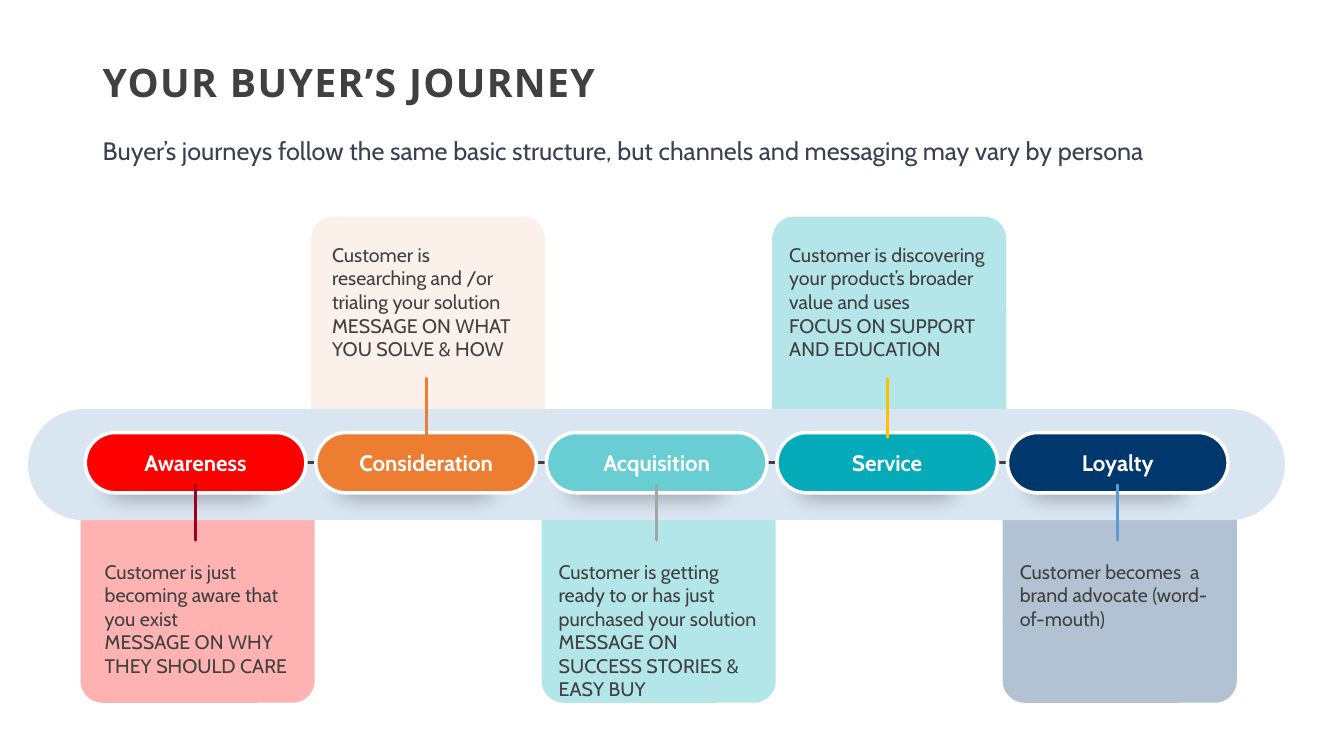
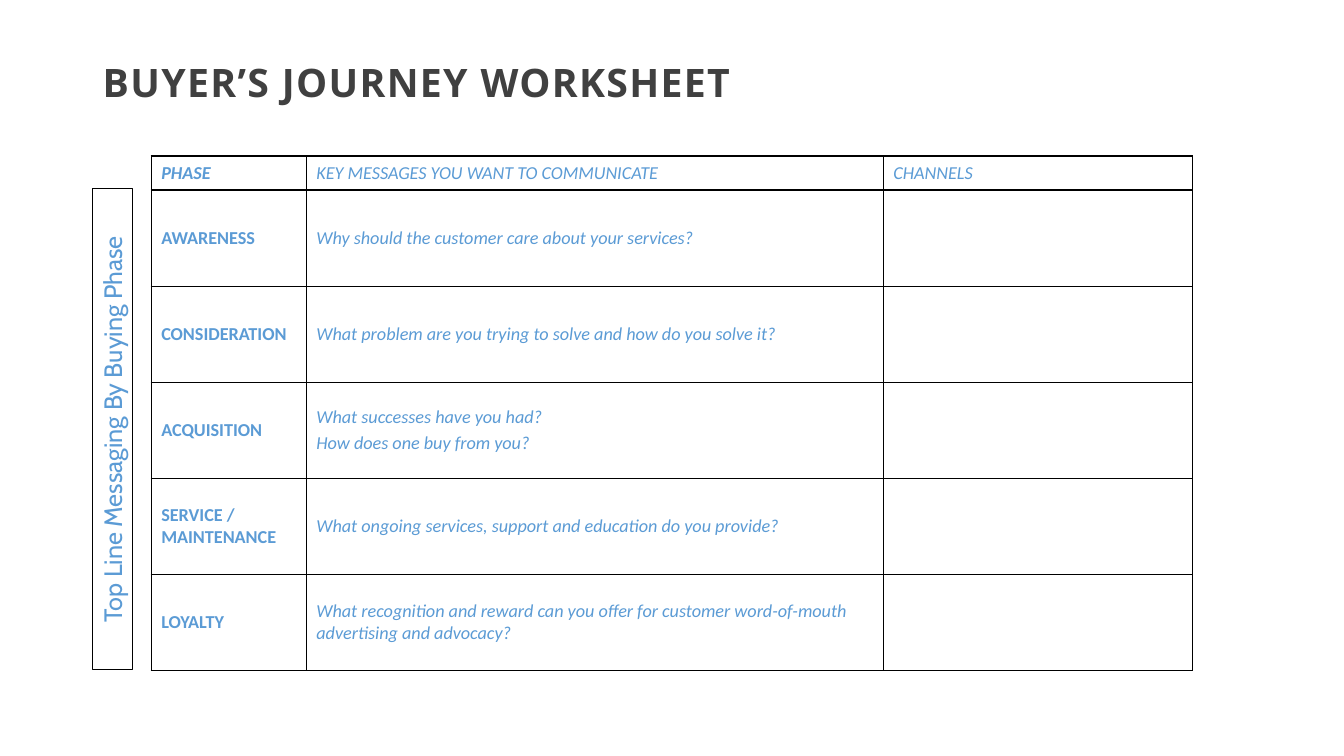
from lxml import etree
from pptx import Presentation
from pptx.dml.color import RGBColor
from pptx.enum.shapes import MSO_CONNECTOR, MSO_SHAPE
from pptx.enum.text import MSO_ANCHOR, PP_ALIGN
from pptx.oxml.ns import qn
from pptx.util import Cm, Pt

BLACK = RGBColor(0x00, 0x00, 0x00)
WHITE = RGBColor(0xFF, 0xFF, 0xFF)
CHARCOAL = RGBColor(0x40, 0x40, 0x40)
SLATE = RGBColor(0x37, 0x41, 0x51)
BAND = RGBColor(0xD9, 0xE5, 0xF1)
RED = RGBColor(0xFF, 0x00, 0x00)
CRIMSON = RGBColor(0x9B, 0x02, 0x1E)
ORANGE = RGBColor(0xED, 0x7D, 0x31)
PEACH = RGBColor(0xFB, 0xE5, 0xD6)
AQUA = RGBColor(0x68, 0xCE, 0xD3)
GREY = RGBColor(0xA5, 0xA5, 0xA5)
TEAL = RGBColor(0x05, 0xAB, 0xB9)
GOLD = RGBColor(0xFF, 0xC0, 0x00)
NAVY = RGBColor(0x00, 0x37, 0x6D)
BLUE = RGBColor(0x5B, 0x9B, 0xD5)

TITLE_FONT, BODY_FONT, TABLE_FONT = "Open Sans", "Cabin", "Calibri"

PITCH = 5.81
PILL_LEFT, PILL_TOP, PILL_W, PILL_H = 2.15, 10.9, 5.56, 1.52
CARD_W, CARD_H = 5.9, 5.37
UPPER = {"card": 5.46, "text": 6.12, "tick": (9.53, 11.02)}
LOWER = {"card": 12.34, "text": 14.1, "tick": (12.22, 13.61)}

# name, pill, card, card opacity, tick, text inset, text width, text
STAGES = [
    ("Awareness", RED, RED, 30, CRIMSON, 0.61, 4.67,
     "Customer is just becoming aware that you exist\nMESSAGE ON WHY THEY SHOULD CARE"),
    ("Consideration", ORANGE, PEACH, 50, ORANGE, 0.53, 4.9,
     "Customer is researching and /or trialing your solution\nMESSAGE ON WHAT YOU SOLVE & HOW"),
    ("Acquisition", AQUA, AQUA, 50, GREY, 0.43, 5.18,
     "Customer is getting ready to or has just purchased your solution\n"
     "MESSAGE ON SUCCESS STORIES & EASY BUY"),
    ("Service", TEAL, TEAL, 30, GOLD, 0.43, 5.03,
     "Customer is discovering your product’s broader value and uses\n"
     "FOCUS ON SUPPORT AND EDUCATION"),
    ("Loyalty", NAVY, NAVY, 30, BLUE, 0.43, 5.0,
     "Customer becomes  a brand advocate (word-of-mouth)"),
]

COLUMNS = [3.91, 14.54, 7.79]
HEADER = ("PHASE", "KEY MESSAGES YOU WANT TO COMMUNICATE", "CHANNELS")
WORKSHEET = [
    ("AWARENESS", "Why should the customer care about your services?", ""),
    ("CONSIDERATION", "What problem are you trying to solve and how do you solve it?", ""),
    ("ACQUISITION", "What successes have you had?\nHow does one buy from you?", ""),
    ("SERVICE / MAINTENANCE",
     "What ongoing services, support and education do you provide?", ""),
    ("LOYALTY", "What recognition and reward can you offer for customer "
     "word-of-mouth advertising and advocacy?", ""),
]


def write(tf, text, size, color, font=BODY_FONT, bold=False, italic=False,
          align=PP_ALIGN.LEFT, anchor=MSO_ANCHOR.TOP, inset=None,
          line_spacing=None, after=None, tracking=None):
    tf.word_wrap = True
    tf.vertical_anchor = anchor
    if inset is not None:
        tf.margin_left = tf.margin_right = tf.margin_top = tf.margin_bottom = Cm(inset)
    for i, line in enumerate(text.split("\n")):
        p = tf.add_paragraph() if i else tf.paragraphs[0]
        p.alignment = align
        p.line_spacing = line_spacing
        p.space_after = after
        r = p.add_run()
        r.text = line
        r.font.name, r.font.size = font, Pt(size)
        r.font.bold, r.font.italic = bold, italic
        r.font.color.rgb = color
        if tracking:
            r.font._element.set("spc", str(tracking * 100))


def add_text(s, x, y, w, h, text, **fmt):
    tf = s.shapes.add_textbox(Cm(x), Cm(y), Cm(w), Cm(h)).text_frame
    write(tf, text, **fmt)


def add_title(s, text):
    add_text(s, 2.34, 1.02, 29.21, 2.21, text, size=28, color=CHARCOAL,
             font=TITLE_FONT, bold=True, anchor=MSO_ANCHOR.MIDDLE,
             line_spacing=0.9, tracking=1)


def add_box(s, x, y, w, h, fill=None, opacity=100, radius=None, line=None,
            line_width=0.75, soft_edge=None):
    kind = MSO_SHAPE.RECTANGLE if radius is None else MSO_SHAPE.ROUNDED_RECTANGLE
    sp = s.shapes.add_shape(kind, Cm(x), Cm(y), Cm(w), Cm(h))
    sp.shadow.inherit = False
    if radius is not None:
        sp.adjustments[0] = radius
    if fill is None:
        sp.fill.background()
    else:
        sp.fill.solid()
        sp.fill.fore_color.rgb = fill
    if opacity < 100:
        clr = sp._element.spPr.find(qn("a:solidFill")).find(qn("a:srgbClr"))
        etree.SubElement(clr, qn("a:alpha")).set("val", str(opacity * 1000))
    if line is None:
        sp.line.fill.background()
    else:
        sp.line.color.rgb = line
        sp.line.width = Pt(line_width)
    if soft_edge:
        effects = sp._element.spPr.find(qn("a:effectLst"))
        etree.SubElement(effects, qn("a:softEdge")).set("rad", str(Pt(soft_edge)))
    return sp


def add_line(s, x1, y1, x2, y2, color):
    c = s.shapes.add_connector(MSO_CONNECTOR.STRAIGHT, Cm(x1), Cm(y1), Cm(x2), Cm(y2))
    c.line.color.rgb = color
    c.line.width = Pt(2)
    spPr = c._element.spPr
    spPr.find(qn("a:ln")).set("cap", "rnd")
    etree.SubElement(spPr, qn("a:effectLst"))


def add_borders(cell, color, width):
    tcPr = cell._tc.get_or_add_tcPr()
    for i, side in enumerate(("lnL", "lnR", "lnT", "lnB")):
        ln = etree.Element(qn(f"a:{side}"), w=str(Pt(width)))
        fill = etree.SubElement(ln, qn("a:solidFill"))
        etree.SubElement(fill, qn("a:srgbClr")).set("val", str(color))
        tcPr.insert(i, ln)


def add_worksheet(s, x, y):
    rows = [HEADER] + WORKSHEET
    heights = [0.86] + [2.42] * len(WORKSHEET)
    table = s.shapes.add_table(len(rows), len(COLUMNS), Cm(x), Cm(y),
                               Cm(sum(COLUMNS)), Cm(sum(heights))).table
    table.first_row = table.horz_banding = False
    for column, width in zip(table.columns, COLUMNS):
        column.width = Cm(width)
    for i, (row, height) in enumerate(zip(rows, heights)):
        table.rows[i].height = Cm(height)
        for j, text in enumerate(row):
            cell = table.cell(i, j)
            cell.fill.background()
            add_borders(cell, BLACK, 1)
            cell.vertical_anchor = MSO_ANCHOR.MIDDLE
            if text:
                write(cell.text_frame, text, size=13, color=BLUE, font=TABLE_FONT,
                      bold=j == 0, italic=i == 0 or j > 0,
                      anchor=None, after=Pt(2.6))


def build_journey(s):
    add_title(s, "YOUR BUYER’S JOURNEY")
    add_text(s, 2.34, 3.23, 30.56, 1.04,
             "Buyer’s journeys follow the same basic structure, "
             "but channels and messaging may vary by persona",
             size=18, color=SLATE, line_spacing=1.07)

    placed = [(PILL_LEFT + i * PITCH, UPPER if i % 2 else LOWER, stage)
              for i, stage in enumerate(STAGES)]
    for x, side, (_, _, card, opacity, _, inset, width, text) in placed:
        card_x = x - 0.12
        add_box(s, card_x, side["card"], CARD_W, CARD_H, card, opacity, radius=0.104)
        add_text(s, card_x + inset, side["text"], width, 2.2, text,
                 size=14, color=CHARCOAL, inset=0)

    add_box(s, 0.71, 10.31, 31.67, 2.8, BAND, radius=0.5)
    for x, _, _ in placed:
        add_box(s, x - 0.27, PILL_TOP + 0.68, PILL_W, PILL_H, BLACK, 30,
                radius=0.5, soft_edge=15)
    middle = PILL_TOP + PILL_H / 2
    add_line(s, 2.77, middle, 29.97, middle, CHARCOAL)
    for x, side, (name, pill, _, _, tick, _, _, _) in placed:
        sp = add_box(s, x, PILL_TOP, PILL_W, PILL_H, pill, radius=0.5,
                     line=WHITE, line_width=2.5)
        write(sp.text_frame, name, size=16, color=WHITE, bold=True, inset=0,
              align=PP_ALIGN.CENTER, anchor=MSO_ANCHOR.MIDDLE)
        center = x + PILL_W / 2
        top, bottom = side["tick"]
        add_line(s, center, top, center, bottom, tick)


def build_worksheet(s):
    add_title(s, "BUYER’S JOURNEY WORKSHEET")
    add_worksheet(s, 3.81, 3.93)
    sp = add_box(s, -3.23, 10.31, 12.12, 1.02, line=BLACK)
    sp.rotation = 270
    write(sp.text_frame, "Top Line Messaging By Buying Phase", size=18,
          color=BLUE, align=PP_ALIGN.CENTER)


def main():
    prs = Presentation()
    prs.slide_width, prs.slide_height = Cm(33.87), Cm(19.05)
    for build in (build_journey, build_worksheet):
        build(prs.slides.add_slide(prs.slide_layouts[6]))
    prs.save("out.pptx")


if __name__ == "__main__":
    main()
